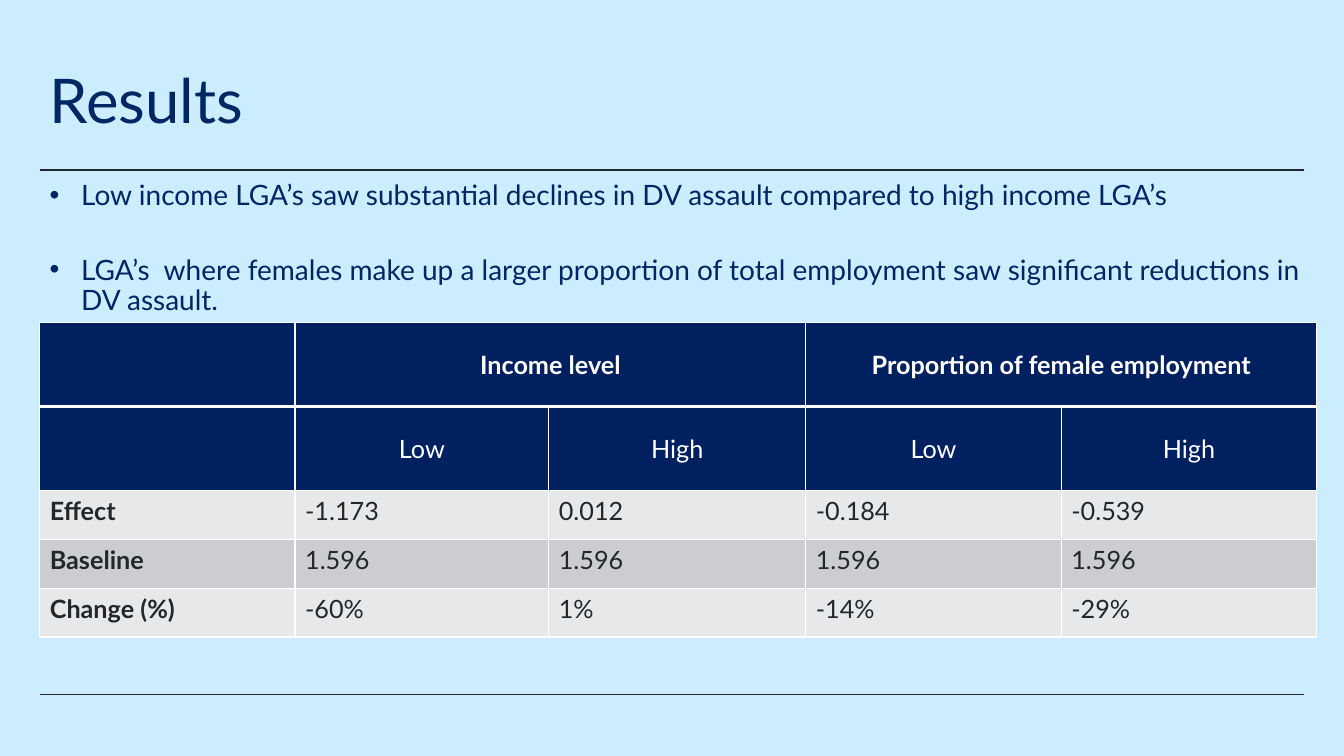
from pptx import Presentation
from pptx.dml.color import RGBColor
from pptx.enum import shapes, text
from pptx.oxml import parse_xml
from pptx.oxml.ns import nsdecls
from pptx.util import Pt

# Content
TITLE = "Results"
FINDINGS = [
    "Low income LGA’s saw substantial declines in DV assault compared to high income LGA’s",
    "LGA’s  where females make up a larger proportion of total employment "
    "saw significant reductions in DV assault.",
]
RESULTS = [
    ["", "Income level", "", "Proportion of female employment", ""],
    ["", "Low", "High", "Low", "High"],
    ["Effect", "-1.173", "0.012", "-0.184", "-0.539"],
    ["Baseline", "1.596", "1.596", "1.596", "1.596"],
    ["Change (%)", "-60%", "1%", "-14%", "-29%"],
]
HEADER_ROWS = 2

# Style and layout, in points
FONT = "Lato"
SKY, NAVY, HEADER, INK, WHITE = "CBEDFD", "002664", "002060", "22272B", "FFFFFF"
BANDS = ["E7E8EA", "CCCDD3"]
LEFT, RULE_RIGHT, RULE_TOPS = 28.4, 931.5, [121.5, 496]
TABLE_TOP, TABLE_WIDTH = 230.4, 912.2
COLUMN_WIDTHS = [182.4, 181.2, 183.6, 182.5, 182.5]
HEADER_HEIGHT, DATA_HEIGHT = 60, 34.9
FINDING_INDENT, FINDING_GAPS = 22.5, [5, 31.6]


def paint(target, color):
    target.solid()
    target.fore_color.rgb = RGBColor.from_string(color)


def write(paragraph, words, size, color, bold=False):
    paragraph.text = words
    for run in paragraph.runs:
        run.font.name, run.font.size, run.font.bold = FONT, Pt(size), bold
        run.font.color.rgb = RGBColor.from_string(color)


def add_frame(left, top, width, height, anchor):
    frame = slide.shapes.add_textbox(Pt(left), Pt(top), Pt(width), Pt(height)).text_frame
    frame.word_wrap = True
    frame.vertical_anchor = anchor
    return frame


def add_borders(cell, top, bottom):
    for side, width in (("L", 1), ("R", 1), ("T", top), ("B", bottom)):
        cell._tc.get_or_add_tcPr().append(parse_xml(
            f'<a:ln{side} {nsdecls("a")} w="{Pt(width)}"><a:solidFill>'
            f'<a:srgbClr val="{WHITE}"/></a:solidFill></a:ln{side}>'))


presentation = Presentation()
presentation.slide_width, presentation.slide_height = Pt(960), Pt(540)
slide = presentation.slides.add_slide(presentation.slide_layouts[6])
paint(slide.background.fill, SKY)

# Rules
for top in RULE_TOPS:
    rule = slide.shapes.add_connector(
        shapes.MSO_CONNECTOR.STRAIGHT, Pt(LEFT), Pt(top), Pt(RULE_RIGHT), Pt(top))
    paint(rule.line.fill, INK)
    rule.line.width = Pt(1)
    rule._element.spPr.append(parse_xml(f'<a:effectLst {nsdecls("a")}/>'))

# Title
title = add_frame(LEFT, 21.6, 828, 104.4, text.MSO_ANCHOR.MIDDLE).paragraphs[0]
write(title, TITLE, 44, NAVY)
title.line_spacing = 0.9

# Findings
findings = add_frame(LEFT, 126, TABLE_WIDTH, 159, text.MSO_ANCHOR.TOP)
for index, (words, gap) in enumerate(zip(FINDINGS, FINDING_GAPS)):
    finding = findings.add_paragraph() if index else findings.paragraphs[0]
    write(finding, words, 20, NAVY)
    finding.line_spacing, finding.space_before = 0.9, Pt(gap)
    properties = finding._p.get_or_add_pPr()
    properties.set("marL", str(Pt(FINDING_INDENT)))
    properties.set("indent", str(-Pt(FINDING_INDENT)))
    properties.append(parse_xml(f'<a:buFont {nsdecls("a")} typeface="Arial"/>'))
    properties.append(parse_xml(f'<a:buChar {nsdecls("a")} char="•"/>'))

# Results table
row_heights = [HEADER_HEIGHT if r < HEADER_ROWS else DATA_HEIGHT for r in range(len(RESULTS))]
table = slide.shapes.add_table(
    len(RESULTS), len(COLUMN_WIDTHS), Pt(LEFT), Pt(TABLE_TOP),
    Pt(TABLE_WIDTH), Pt(sum(row_heights))).table
table.horz_banding = False
for column, width in zip(table.columns, COLUMN_WIDTHS):
    column.width = Pt(width)
for r, (values, height) in enumerate(zip(RESULTS, row_heights)):
    table.rows[r].height = Pt(height)
    is_header = r < HEADER_ROWS
    for c, value in enumerate(values):
        cell = table.cell(r, c)
        add_borders(cell, top=3 if r == 1 else 1, bottom=3 if r == 0 else 1)
        paint(cell.fill, HEADER if is_header else BANDS[(r - HEADER_ROWS) % 2])
        label = cell.text_frame.paragraphs[0]
        write(label, value, 18, WHITE if is_header else INK,
              bold=r == 0 or c == 0)
        if is_header:
            cell.vertical_anchor = text.MSO_ANCHOR.MIDDLE
            label.alignment = text.PP_ALIGN.CENTER
for c in (1, 3):
    table.cell(0, c).merge(table.cell(0, c + 1))

presentation.save("out.pptx")
